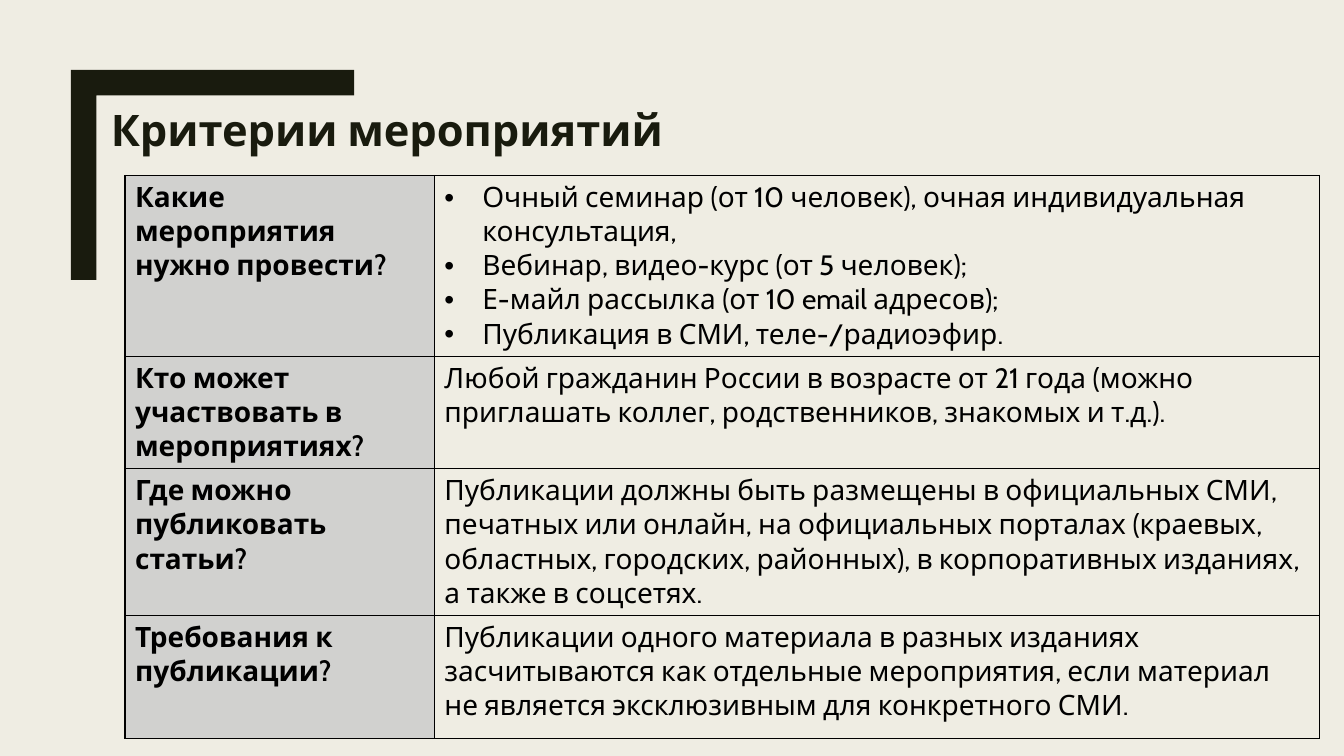
from pptx import Presentation
from pptx.dml.color import RGBColor
from pptx.enum import text as t
from pptx.oxml import parse_xml
from pptx.oxml.ns import nsdecls
from pptx.util import Pt

TITLE = "Критерии мероприятий"
ROWS = [
    ("Какие мероприятия нужно провести?",
     ["Очный семинар (от 10 человек), очная индивидуальная консультация,",
      "Вебинар, видео-курс (от 5 человек);",
      "Е-майл рассылка (от 10 email адресов);",
      "Публикация в СМИ, теле-/радиоэфир."]),
    ("Кто может участвовать в мероприятиях?",
     ["Любой гражданин России в возрасте от 21 года (можно приглашать "
      "коллег, родственников, знакомых и т.д.)."]),
    ("Где можно публиковать статьи?",
     ["Публикации должны быть размещены в официальных СМИ, печатных или "
      "онлайн, на официальных порталах (краевых, областных, городских, "
      "районных), в корпоративных изданиях, а также в соцсетях."]),
    ("Требования к публикации?",
     ["Публикации одного материала в разных изданиях засчитываются как "
      "отдельные мероприятия, если материал не является эксклюзивным для "
      "конкретного СМИ."]),
]
COLS = [221, 632]
HIGH = [118, 65, 96, 88]
FONT = "Cabin"
HEX = {"back": "EFEDE3", "dark": "191B0E", "head": "D1D1CF", "ink": "000000"}


def color(key):
    return RGBColor.from_string(HEX[key])


def write(para, words, size, key, bold):
    run = para.add_run()
    run.text = words
    font = run.font
    font.name, font.size, font.bold = FONT, Pt(size), bold
    font.color.rgb = color(key)


def bullet(para):
    props = para._p.get_or_add_pPr()
    props.set("marL", str(Pt(27)))
    props.set("indent", str(Pt(-27)))
    props.append(parse_xml(f'<a:buFont {nsdecls("a")} typeface="Arial"/>'))
    props.append(parse_xml(f'<a:buChar {nsdecls("a")} char="•"/>'))


def border(cell):
    props = cell._tc.get_or_add_tcPr()
    for i, side in enumerate("LRTB"):
        props.insert(i, parse_xml(
            f'<a:ln{side} {nsdecls("a")} w="{Pt(1)}"><a:solidFill>'
            f'<a:srgbClr val="{HEX["ink"]}"/></a:solidFill></a:ln{side}>'))


def fill_cell(cell, lines, bold):
    for i, line in enumerate(lines):
        frame = cell.text_frame
        para = frame.add_paragraph() if i else frame.paragraphs[0]
        if len(lines) > 1:
            bullet(para)
        write(para, line, 20, "ink", bold)
    if bold:
        cell.fill.solid()
        cell.fill.fore_color.rgb = color("head")
    else:
        cell.fill.background()
    border(cell)


def add_grid(slide):
    grid = slide.shapes.add_table(len(ROWS), len(COLS), Pt(89.3), Pt(125.3),
                                  Pt(sum(COLS)), Pt(sum(HIGH))).table
    grid.first_row = grid.horz_banding = False
    for col, wide in zip(grid.columns, COLS):
        col.width = Pt(wide)
    for row, high, (head, lines) in zip(grid.rows, HIGH, ROWS):
        row.height = Pt(high)
        fill_cell(row.cells[0], [head], True)
        fill_cell(row.cells[1], lines, False)


def add_title(slide):
    title = slide.shapes.title
    title.left, title.top = Pt(72), Pt(74.2)
    title.width, title.height = Pt(888), Pt(59.8)
    frame = title.text_frame
    frame.auto_size = t.MSO_AUTO_SIZE.NONE
    frame.vertical_anchor = t.MSO_ANCHOR.TOP
    para = frame.paragraphs[0]
    para.alignment = t.PP_ALIGN.LEFT
    para.line_spacing = 0.89
    write(para, TITLE, 31, "dark", True)


def add_corner(slide, left, top, right, base, thick):
    pen = slide.shapes.build_freeform(Pt(left), Pt(top))
    ends = [(right, top), (right, top + thick), (left + thick, top + thick),
            (left + thick, base), (left, base)]
    pen.add_line_segments([(Pt(x), Pt(y)) for x, y in ends])
    corner = pen.convert_to_shape()
    corner.shadow.inherit = False
    corner.fill.solid()
    corner.fill.fore_color.rgb = color("dark")
    corner.line.fill.background()


def main():
    deck = Presentation()
    deck.slide_width, deck.slide_height = Pt(960), Pt(540)
    slide = deck.slides.add_slide(deck.slide_layouts[5])
    slide.background.fill.solid()
    slide.background.fill.fore_color.rgb = color("back")
    add_grid(slide)
    add_title(slide)
    add_corner(slide, 50.6, 50, 253, 200, 18.2)
    deck.save("out.pptx")


if __name__ == "__main__":
    main()
